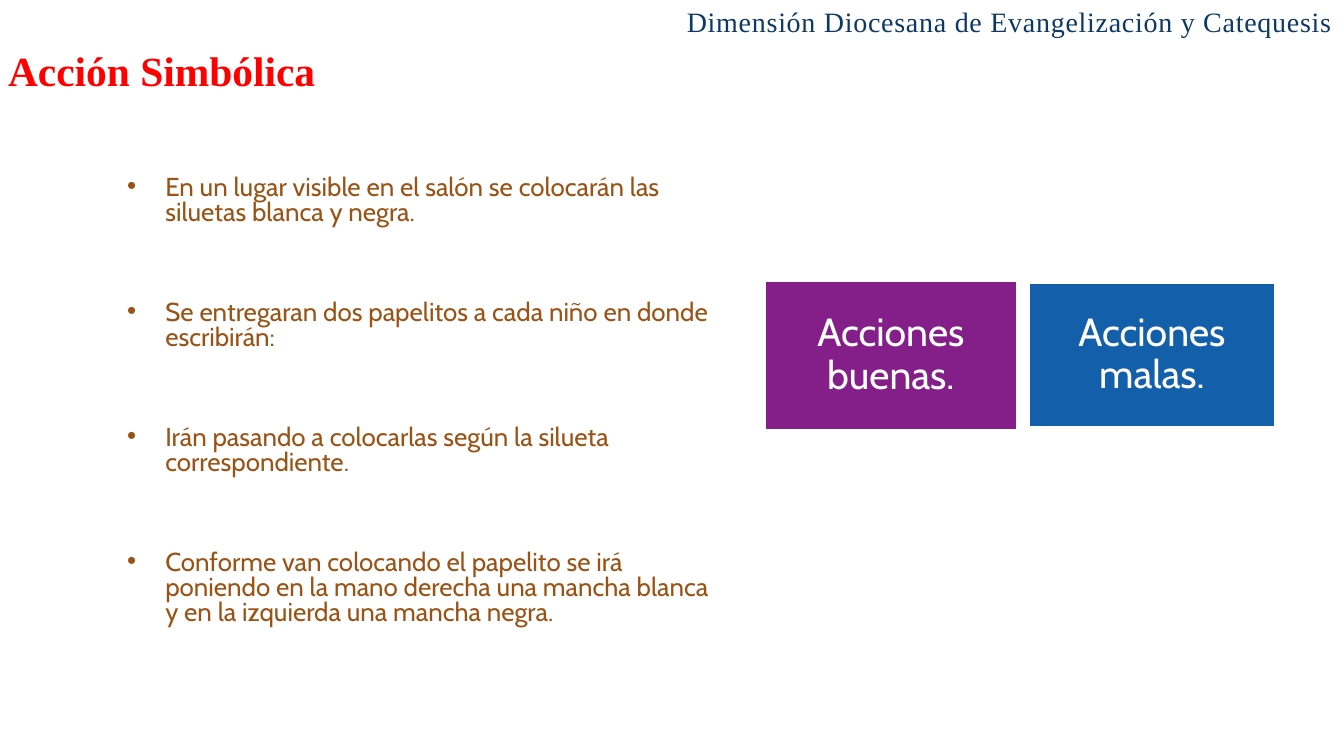
import pptx
import pptx.util
import pptx.dml.color
import pptx.enum.shapes
import pptx.enum.text
import pptx.oxml.ns
from dataclasses import dataclass
from lxml import etree

Inches, Pt = pptx.util.Inches, pptx.util.Pt
Align, Anchor = pptx.enum.text.PP_ALIGN, pptx.enum.text.MSO_ANCHOR


@dataclass(frozen=True)
class Theme:
    serif: str = "Times New Roman"
    sans: str = "Cabin"
    navy: str = "0D3965"
    red: str = "FF0000"
    brown: str = "9A5315"
    purple: str = "841E89"
    blue: str = "145FAA"
    white: str = "FFFFFF"
    header_size: float = 20
    title_size: float = 29.6
    list_size: float = 18.5
    tile_size: float = 28


def rgb(code):
    return pptx.dml.color.RGBColor.from_string(code)


def write_text(paragraph, text, *, font, size, color, bold=False, align=Align.LEFT,
               line_spacing=1.0, before=0, tracking=None, bullet=None, indent=0):
    """Put formatted text, with an optional hanging bullet, in a paragraph."""
    properties = paragraph._p.get_or_add_pPr()
    if bullet:
        properties.set("marL", str(Inches(indent)))
        properties.set("indent", str(-Inches(indent)))
        mark = etree.SubElement(properties, pptx.oxml.ns.qn("a:buChar"))
        mark.set("char", bullet)
    paragraph.alignment = align
    paragraph.line_spacing = line_spacing
    paragraph.space_before = Pt(before)
    run = paragraph.add_run()
    run.text = text
    run.font.name, run.font.size, run.font.bold = font, Pt(size), bold
    run.font.color.rgb = rgb(color)
    if tracking:
        run._r.get_or_add_rPr().set("spc", str(int(tracking * 100)))


class SlideBuilder:
    def __init__(self, slide, theme):
        self.slide, self.theme = slide, theme

    def prepare(self, shape, box, anchor):
        """Place a shape and return its text frame, ready for writing."""
        shape.left, shape.top, shape.width, shape.height = map(Inches, box)
        frame = shape.text_frame
        frame.word_wrap = True
        frame.auto_size = pptx.enum.text.MSO_AUTO_SIZE.NONE
        frame.vertical_anchor = anchor
        return frame

    def header(self, text, box):
        frame = self.prepare(self.slide.shapes.add_textbox(0, 0, 0, 0), box, Anchor.TOP)
        write_text(frame.paragraphs[0], text, font=self.theme.serif,
                   size=self.theme.header_size, color=self.theme.navy,
                   align=Align.RIGHT, tracking=0.5)

    def title(self, text, box):
        frame = self.prepare(self.slide.shapes.title, box, Anchor.BOTTOM)
        write_text(frame.paragraphs[0], text, font=self.theme.serif,
                   size=self.theme.title_size, color=self.theme.red,
                   bold=True, line_spacing=0.7)

    def bullets(self, items, box, gap):
        frame = self.prepare(self.slide.placeholders[1], box, Anchor.TOP)
        for i, item in enumerate(items):
            paragraph = frame.add_paragraph() if i else frame.paragraphs[0]
            write_text(paragraph, item, font=self.theme.sans,
                       size=self.theme.list_size, color=self.theme.brown,
                       line_spacing=0.8, before=gap if i else 0,
                       bullet="•", indent=0.38)

    def tile(self, text, box, fill):
        tile = self.slide.shapes.add_shape(
            pptx.enum.shapes.MSO_SHAPE.RECTANGLE, 0, 0, 0, 0)
        tile.shadow.inherit = False
        tile.fill.solid()
        tile.fill.fore_color.rgb = rgb(fill)
        tile.line.color.rgb = rgb(self.theme.white)
        tile.line.width = Pt(1)
        frame = self.prepare(tile, box, Anchor.MIDDLE)
        frame.margin_left = frame.margin_right = Inches(0.12)
        frame.margin_top = frame.margin_bottom = Inches(0.12)
        write_text(frame.paragraphs[0], text, font=self.theme.sans,
                   size=self.theme.tile_size, color=self.theme.white,
                   align=Align.CENTER, line_spacing=0.9)


def main():
    theme = Theme()
    deck = pptx.Presentation()
    deck.slide_width, deck.slide_height = Inches(13.33), Inches(7.5)
    builder = SlideBuilder(deck.slides.add_slide(deck.slide_layouts[1]), theme)

    # Steps of the activity
    builder.bullets([
        "En un lugar visible en el salón se colocarán las siluetas blanca y negra.",
        "Se entregaran dos papelitos a cada niño en donde escribirán:",
        "Irán pasando a colocarlas según la silueta correspondiente.",
        "Conforme van colocando el papelito se irá poniendo en la mano derecha "
        "una mancha blanca y en la izquierda una mancha negra.",
    ], (1.16, 1.7, 6.12, 5.19), gap=53.8)

    # The two kinds of actions
    builder.tile("Acciones buenas.", (7.59, 2.79, 2.49, 1.47), theme.purple)
    builder.tile("Acciones malas.", (10.21, 2.81, 2.43, 1.42), theme.blue)

    # Header and title
    builder.header("Dimensión Diocesana de Evangelización y Catequesis",
                   (-0.02, 0, 13.33, 0.44))
    builder.title("Acción Simbólica", (-0.02, 0.51, 8.9, 0.47))

    deck.save("out.pptx")


if __name__ == "__main__":
    main()
